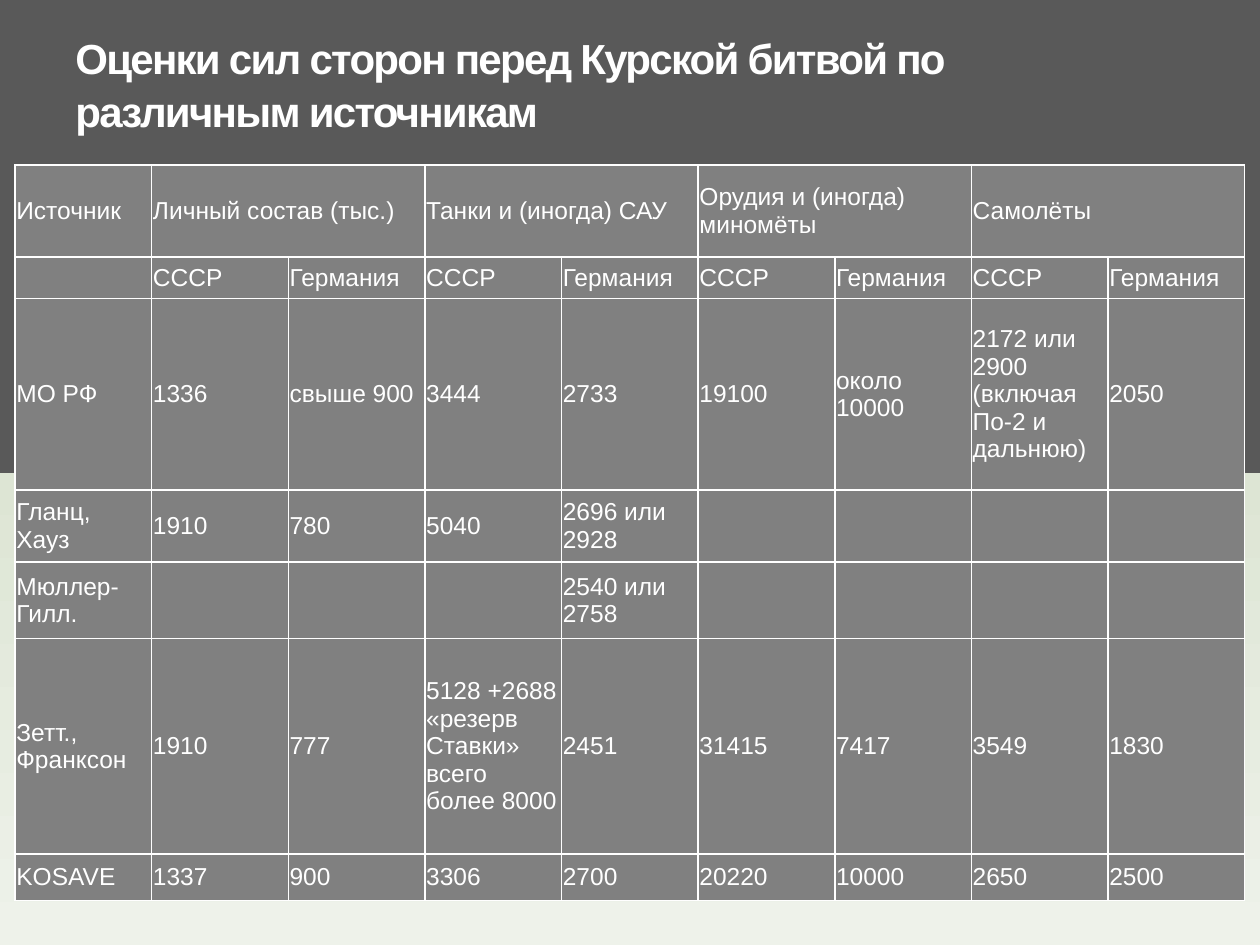
from dataclasses import dataclass
from copy import deepcopy

from lxml import etree
from pptx import Presentation
from pptx import util as u
from pptx.dml.color import RGBColor
from pptx.enum import text
from pptx.oxml.ns import qn

COLORS = {"dark": "595959", "green": "DDE5D4", "pale": "EEF2EA",
          "cell": "808080", "white": "FFFFFF"}
FONT = "Arial"
TABLE_WIDTH = 9.76
COLUMN_COUNT = 9
MEASURES = ["Личный состав (тыс.)", "Танки и (иногда) САУ",
            "Орудия и (иногда) миномёты", "Самолёты"]


@dataclass
class TableRow:
    height: float
    values: list[str]


ROWS = [
    TableRow(0.73, ["Источник"] + [label for name in MEASURES for label in (name, "")]),
    TableRow(0.33, [""] + ["СССР", "Германия"] * len(MEASURES)),
    TableRow(1.52, ["МО РФ", "1336", "свыше 900", "3444", "2733", "19100", "около 10000",
                    "2172 или 2900 (включая По-2 и дальнюю)", "2050"]),
    TableRow(0.57, ["Гланц, Хауз", "1910", "780", "5040", "2696 или 2928", "", "", "", ""]),
    TableRow(0.61, ["Мюллер-Гилл.", "", "", "", "2540 или 2758", "", "", "", ""]),
    TableRow(1.71, ["Зетт., Франксон", "1910", "777",
                    "5128 +2688 «резерв Ставки» всего более 8000", "2451",
                    "31415", "7417", "3549", "1830"]),
    TableRow(0.37, ["KOSAVE", "1337", "900", "3306", "2700", "20220", "10000", "2650", "2500"]),
]


def color(name: str) -> RGBColor:
    return RGBColor.from_string(COLORS[name])


def format_runs(paragraph, size: float, bold: bool = False) -> None:
    for run in paragraph.runs:
        run.font.name = FONT
        run.font.size = u.Pt(size)
        run.font.bold = bold
        run.font.color.rgb = color("white")


def paint_background(slide) -> None:
    """Dark upper half, pale green gradient below."""
    fill = slide.background.fill
    fill.gradient()
    fill.gradient_angle = 270
    first_stop = fill.gradient_stops[0]
    stop_list = slide.background._cSld.find(".//" + qn("a:gsLst"))
    for _ in range(2):
        stop_list.append(deepcopy(stop_list[0]))
    stops = [(0, "dark"), (0.5, "dark"), (0.5, "green"), (1, "pale")]
    for stop, (position, name) in zip(fill.gradient_stops, stops):
        stop.position = position
        stop.color.rgb = color(name)


def add_title(slide, title: str) -> None:
    box = slide.shapes.add_textbox(u.Inches(0.5), u.Inches(0.2), u.Inches(8.52), u.Inches(0.91))
    frame = box.text_frame
    frame.word_wrap = True
    frame.vertical_anchor = text.MSO_ANCHOR.MIDDLE
    frame.text = title
    paragraph = frame.paragraphs[0]
    paragraph.line_spacing = 1.05
    format_runs(paragraph, 24, bold=True)
    for run in paragraph.runs:
        run.font._element.set("spc", "-100")


def add_borders(cell) -> None:
    properties = cell._tc.get_or_add_tcPr()
    for index, side in enumerate(("lnL", "lnR", "lnT", "lnB")):
        line = etree.Element(qn(f"a:{side}"), w=str(u.Pt(1)))
        fill = etree.SubElement(line, qn("a:solidFill"))
        etree.SubElement(fill, qn("a:srgbClr"), val=COLORS["white"])
        properties.insert(index, line)


def fill_cell(cell, value: str) -> None:
    cell.margin_left = cell.margin_right = u.Inches(0.01)
    cell.margin_top = cell.margin_bottom = u.Inches(0.01)
    cell.vertical_anchor = text.MSO_ANCHOR.MIDDLE
    cell.fill.solid()
    cell.fill.fore_color.rgb = color("cell")
    cell.text_frame.text = value
    format_runs(cell.text_frame.paragraphs[0], 14)
    add_borders(cell)


def add_forces_table(slide, rows: list[TableRow]) -> None:
    height = sum(row.height for row in rows)
    table = slide.shapes.add_table(len(rows), COLUMN_COUNT, u.Inches(0.12), u.Inches(1.31),
                                   u.Inches(TABLE_WIDTH), u.Inches(height)).table
    for column in table.columns:
        column.width = u.Inches(TABLE_WIDTH / COLUMN_COUNT)
    for row_index, row in enumerate(rows):
        table.rows[row_index].height = u.Inches(row.height)
        for column_index, value in enumerate(row.values):
            fill_cell(table.cell(row_index, column_index), value)
    # Each measure heads a pair of columns
    for left in range(1, COLUMN_COUNT, 2):
        table.cell(0, left).merge(table.cell(0, left + 1))


def main() -> None:
    presentation = Presentation()
    presentation.slide_width = u.Inches(10)
    presentation.slide_height = u.Inches(7.5)
    slide = presentation.slides.add_slide(presentation.slide_layouts[6])
    paint_background(slide)
    add_forces_table(slide, ROWS)
    add_title(slide, "Оценки сил сторон перед Курской битвой по различным источникам")
    presentation.save("out.pptx")


if __name__ == "__main__":
    main()
